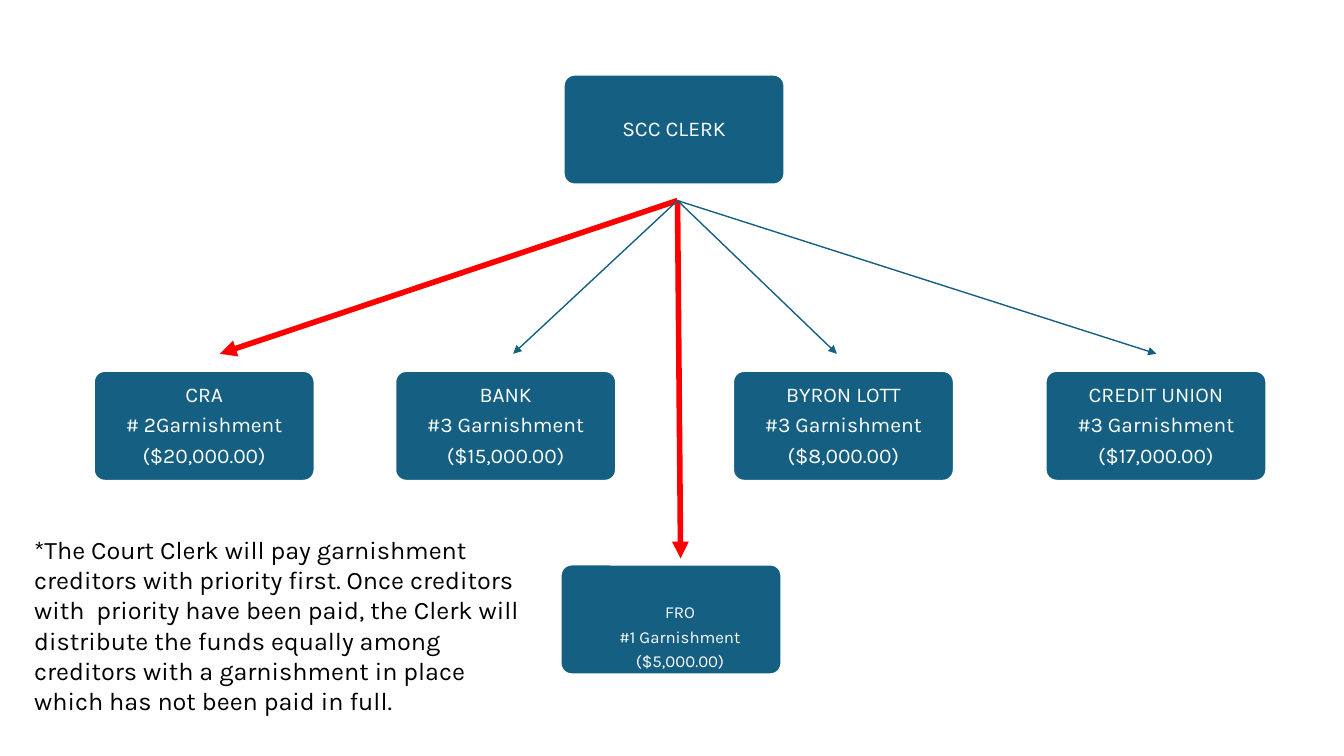
"""Build a slide showing how the clerk pays garnishment creditors."""
from lxml import etree
from pptx import Presentation
from pptx.dml.color import RGBColor
from pptx.enum.shapes import MSO_CONNECTOR, MSO_SHAPE
from pptx.enum.text import MSO_ANCHOR, PP_ALIGN
from pptx.oxml.ns import qn
from pptx.util import Inches, Pt

ROUNDED = MSO_SHAPE.ROUNDED_RECTANGLE
STRAIGHT = MSO_CONNECTOR.STRAIGHT
MIDDLE = MSO_ANCHOR.MIDDLE
CENTER = PP_ALIGN.CENTER

FONT = "Karla"
BLUE, RED, WHITE, BLACK = "156082", "FF0000", "FFFFFF", "000000"
CARD_WIDTH, CARD_HEIGHT = 2.19, 1.09
CREDITOR_TOP = 3.68
ARROW_START = (6.72, 1.99)
ARROW_BOTTOM = 3.51
INSETS = (0.1, 0.1, 0.1, 0.1)
LOWERED_INSETS = (0.24, 0.36, 0.06, 0)

CREDITORS = [
    (0.93, ["CRA", "# 2Garnishment", "($20,000.00)"]),
    (3.92, ["BANK", "#3 Garnishment", "($15,000.00)"]),
    (7.27, ["BYRON LOTT", "#3 Garnishment", "($8,000.00)"]),
    (10.37, ["CREDIT UNION", "#3 Garnishment", "($17,000.00)"]),
]
ARROWS = [
    (6.75, 5.54, RED, 4),
    (2.18, ARROW_BOTTOM, RED, 4),
    (5.09, ARROW_BOTTOM, BLUE, 1),
    (8.3, ARROW_BOTTOM, BLUE, 1),
    (11.47, ARROW_BOTTOM, BLUE, 1),
]
NOTE = (
    "*The Court Clerk will pay garnishment creditors with priority first. "
    "Once creditors with  priority have been paid, the Clerk will distribute "
    "the funds equally among creditors with a garnishment in place which has "
    "not been paid in full."
)


def color(value):
    """Return the colour for a hex string."""
    return RGBColor.from_string(value)


def apply_format(target, values):
    """Set each named attribute on the target."""
    for name, value in values.items():
        setattr(target, name, value)


def set_insets(frame, insets):
    """Set the left, top, right and bottom insets of a text frame."""
    sides = ("left", "top", "right", "bottom")
    apply_format(frame, {f"margin_{side}": Inches(inset)
                         for side, inset in zip(sides, insets)})


def write_lines(frame, lines, size, text_color, paragraph_format):
    """Write one paragraph for each line of text."""
    for index, line in enumerate(lines):
        paragraph = frame.add_paragraph() if index else frame.paragraphs[0]
        apply_format(paragraph, paragraph_format)
        run = paragraph.add_run()
        run.text = line
        apply_format(run.font, {"name": FONT, "size": Pt(size)})
        run.font.color.rgb = color(text_color)


def add_card(slide, left, top, lines, size=15, insets=(0.1, 0.1, 0.1, 0.1)):
    """Add a rounded card with centred white text."""
    shape = slide.shapes.add_shape(ROUNDED, Inches(left), Inches(top),
                                   Inches(CARD_WIDTH), Inches(CARD_HEIGHT))
    shape.adjustments[0] = 0.1
    shape.shadow.inherit = False
    shape.fill.solid()
    shape.fill.fore_color.rgb = color(BLUE)
    shape.line.color.rgb = color(WHITE)
    shape.line.width = Pt(1.5)
    apply_format(shape.text_frame, {"word_wrap": True, "vertical_anchor": MIDDLE})
    set_insets(shape.text_frame, insets)
    write_lines(shape.text_frame, lines, size, WHITE, {
        "alignment": CENTER, "line_spacing": 0.9, "space_after": Pt(size * 0.37)})


def add_arrow(slide, end_x, end_y, line_color, width):
    """Add an arrow from below the clerk to the given point."""
    start_x, start_y = ARROW_START
    connector = slide.shapes.add_connector(
        STRAIGHT, Inches(start_x), Inches(start_y), Inches(end_x), Inches(end_y))
    connector.line.color.rgb = color(line_color)
    connector.line.width = Pt(width)
    etree.SubElement(connector.line._get_or_add_ln(), qn("a:tailEnd"), type="triangle")
    etree.SubElement(connector._element.spPr, qn("a:effectLst"))


def add_note(slide):
    """Add the note on the order of payment."""
    box = slide.shapes.add_textbox(Inches(0.24), Inches(5.25),
                                   Inches(5.07), Inches(1.92))
    box.text_frame.word_wrap = True
    set_insets(box.text_frame, (0.1, 0.05, 0.1, 0.05))
    write_lines(box.text_frame, [NOTE], 18, BLACK, {})


def main():
    """Build and save the slide."""
    presentation = Presentation()
    apply_format(presentation, {"slide_width": Inches(13.33),
                                "slide_height": Inches(7.5)})
    slide = presentation.slides.add_slide(presentation.slide_layouts[6])
    add_card(slide, 5.59, 0.74, ["SCC CLERK"], insets=INSETS)
    for left, lines in CREDITORS:
        add_card(slide, left, CREDITOR_TOP, lines, insets=INSETS)
    add_card(slide, 5.56, 5.6, ["FRO", "#1 Garnishment", "($5,000.00)"],
             size=12, insets=LOWERED_INSETS)
    for arrow in ARROWS:
        add_arrow(slide, *arrow)
    add_note(slide)
    presentation.save("out.pptx")


if __name__ == "__main__":
    main()
